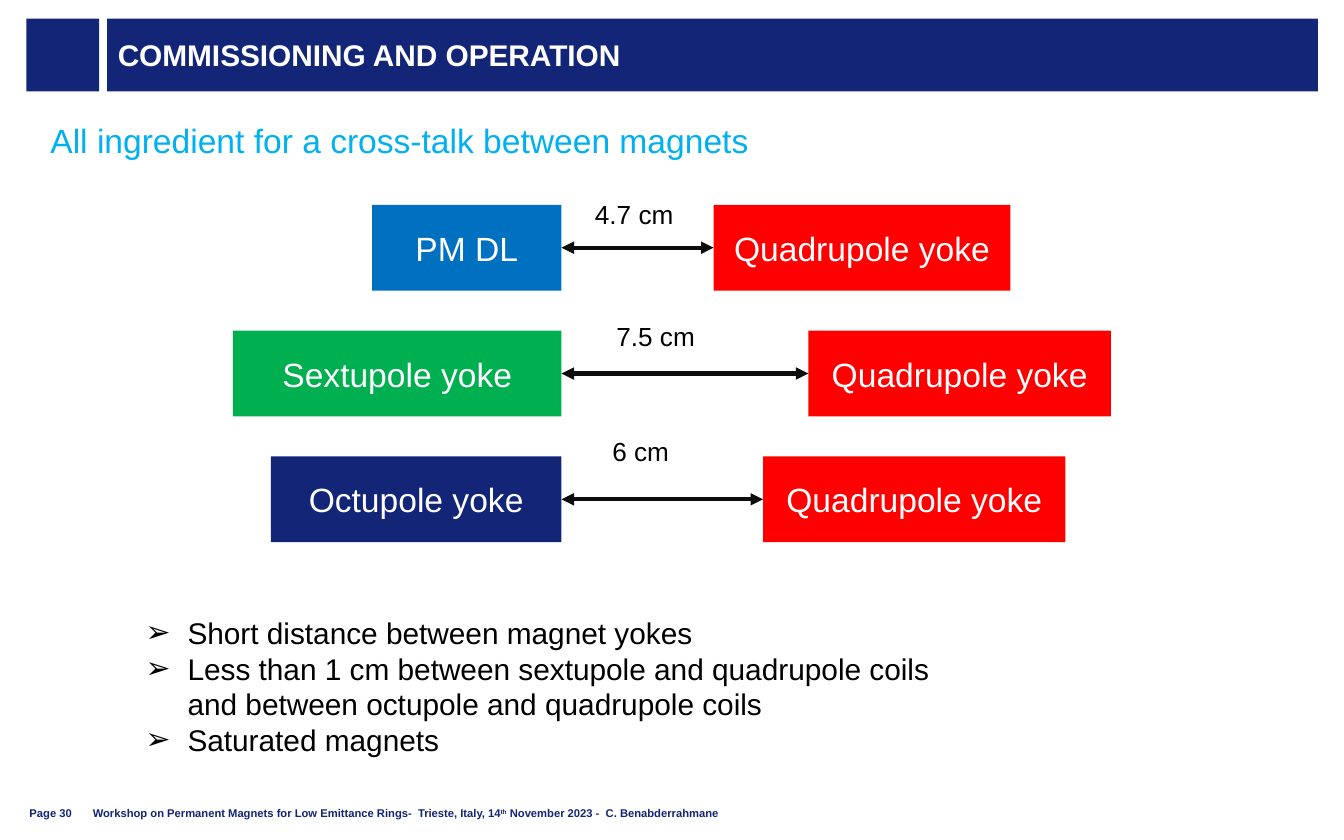
"""Builds the slide on cross-talk between neighbouring magnets."""
import pptx
import pptx.util
import pptx.dml.color
import pptx.enum.shapes
import pptx.enum.text
import pptx.oxml.ns
from lxml import etree

Pt = pptx.util.Pt
RGBColor = pptx.dml.color.RGBColor
ALIGN = pptx.enum.text.PP_ALIGN
ANCHOR = pptx.enum.text.MSO_ANCHOR
RECTANGLE = pptx.enum.shapes.MSO_SHAPE.RECTANGLE
qn = pptx.oxml.ns.qn

NAVY = RGBColor(0x13, 0x25, 0x77)
BLUE = RGBColor(0x00, 0x70, 0xC0)
GREEN = RGBColor(0x00, 0xB0, 0x50)
RED = RGBColor(0xFF, 0x00, 0x00)
SKY = RGBColor(0x00, 0xB0, 0xF0)
INK = RGBColor(0x0D, 0x0D, 0x0D)
BLACK = RGBColor(0x00, 0x00, 0x00)
WHITE = RGBColor(0xFF, 0xFF, 0xFF)

FOOTER_FONT = {"size": 6, "color": NAVY, "bold": True}
NO_MARGINS = {"margin_left": 0, "margin_right": 0, "margin_top": 0, "margin_bottom": 0}
FOOTER_FRAME = {**NO_MARGINS, "vertical_anchor": ANCHOR.BOTTOM}

MAGNET_PAIRS = [
    {"magnet": "PM DL", "color": BLUE, "width": 101.5, "gap": 81.5,
     "yoke_width": 159, "distance": "4.7 cm", "label": (10.8, -6.7)},
    {"magnet": "Sextupole yoke", "color": GREEN, "width": 176, "gap": 132.3,
     "yoke_width": 162, "distance": "7.5 cm", "label": (22.3, -9.2)},
    {"magnet": "Octupole yoke", "color": NAVY, "width": 155.7, "gap": 108,
     "yoke_width": 162, "distance": "6 cm", "label": (20.1, -14.6)},
]
FINDINGS = [
    "Short distance between magnet yokes",
    "Less than 1 cm between sextupole and quadrupole coils "
    "and between octupole and quadrupole coils",
    "Saturated magnets",
]


def apply_format(target, values):
    """Set each named attribute of the target."""
    for name, value in values.items():
        setattr(target, name, value)


def add_run(paragraph, text, size, color, bold=False):
    """Append a formatted run to the paragraph."""
    run = paragraph.add_run()
    run.text = text
    apply_format(run.font, {"name": "Arial", "size": Pt(size), "bold": bold})
    run.font.color.rgb = color
    return run


def add_text(slide, left, top, width, height, text, font, frame_format=None):
    """Add a text box with one paragraph and return its frame."""
    frame = slide.shapes.add_textbox(Pt(left), Pt(top), Pt(width), Pt(height)).text_frame
    apply_format(frame, {"word_wrap": False, **(frame_format or {})})
    add_run(frame.paragraphs[0], text, **font)
    return frame


def add_block(slide, left, top, width, height, color, text=None):
    """Add a plain filled rectangle, with a centred caption if given."""
    block = slide.shapes.add_shape(RECTANGLE, Pt(left), Pt(top), Pt(width), Pt(height))
    block.shadow.inherit = False
    block.fill.solid()
    block.fill.fore_color.rgb = color
    block.line.fill.background()
    if text:
        apply_format(block.text_frame, {"vertical_anchor": ANCHOR.MIDDLE, "word_wrap": True})
        paragraph = block.text_frame.paragraphs[0]
        paragraph.alignment = ALIGN.CENTER
        add_run(paragraph, text, 18, WHITE)
    return block


def add_distance_arrow(slide, magnet, yoke):
    """Join two blocks with a double-headed arrow."""
    arrow = slide.shapes.add_connector(pptx.enum.shapes.MSO_CONNECTOR.STRAIGHT, 0, 0, 0, 0)
    arrow.begin_connect(magnet, 3)
    arrow.end_connect(yoke, 1)
    arrow.line.color.rgb = INK
    arrow.line.width = Pt(2.25)
    line = arrow.line._get_or_add_ln()
    for end in ("a:headEnd", "a:tailEnd"):
        etree.SubElement(line, qn(end), type="triangle")
    etree.SubElement(arrow._element.spPr, qn("a:effectLst"))


def build_header(slide, left, top, width, height):
    """Place the square and the title band."""
    add_block(slide, left, top, height, height, NAVY)
    offset = height + 4.2
    title = slide.shapes.title
    apply_format(title, {"left": Pt(left + offset), "top": Pt(top),
                         "width": Pt(width - offset), "height": Pt(height)})
    title.fill.solid()
    title.fill.fore_color.rgb = NAVY
    apply_format(title.text_frame, {
        **NO_MARGINS, "margin_left": Pt(5.7), "margin_right": Pt(5.7),
        "vertical_anchor": ANCHOR.MIDDLE, "word_wrap": True,
        "auto_size": pptx.enum.text.MSO_AUTO_SIZE.NONE})
    paragraph = title.text_frame.paragraphs[0]
    paragraph.alignment = ALIGN.LEFT
    add_run(paragraph, "COMMISSIONING AND OPERATION", 16, WHITE, True)


def build_magnet_pair(slide, axis, top, height, pair):
    """Place a magnet ending at the axis, its distance and the facing yoke."""
    magnet = add_block(slide, axis - pair["width"], top, pair["width"], height,
                       pair["color"], pair["magnet"])
    yoke = add_block(slide, axis + pair["gap"], top, pair["yoke_width"], height,
                     RED, "Quadrupole yoke")
    add_distance_arrow(slide, magnet, yoke)
    dx, dy = pair["label"]
    add_text(slide, axis + dx, top + dy, 57, 24.5, pair["distance"],
             {"size": 14, "color": BLACK})


def build_findings(slide, left, top, width, height):
    """Place the bulleted findings."""
    frame = slide.shapes.add_textbox(Pt(left), Pt(top), Pt(width), Pt(height)).text_frame
    frame.word_wrap = True
    for index, finding in enumerate(FINDINGS):
        paragraph = frame.add_paragraph() if index else frame.paragraphs[0]
        properties = paragraph._p.get_or_add_pPr()
        properties.set("marL", str(Pt(22.5)))
        properties.set("indent", str(-Pt(22.5)))
        etree.SubElement(properties, qn("a:buFont"), typeface="Arial")
        etree.SubElement(properties, qn("a:buChar"), char="➢")
        add_run(paragraph, finding, 16, BLACK)


def build_footer(slide, left, top, width, height):
    """Place the page number and the workshop line."""
    add_text(slide, left, top, 32.4, height, "Page 30", FOOTER_FONT, FOOTER_FRAME)
    offset = 33.9
    workshop = add_text(
        slide, left + offset, top, width - offset, height,
        "Workshop on Permanent Magnets for Low Emittance Rings-  Trieste, Italy, 14",
        FOOTER_FONT, FOOTER_FRAME).paragraphs[0]
    ordinal = add_run(workshop, "th", **FOOTER_FONT)
    ordinal.font._element.set("baseline", "30000")
    add_run(workshop, " November 2023 -  C. Benabderrahmane", **FOOTER_FONT)


def main():
    """Build and save the slide."""
    presentation = pptx.Presentation()
    apply_format(presentation, {"slide_width": Pt(720), "slide_height": Pt(450)})
    slide = presentation.slides.add_slide(presentation.slide_layouts[5])
    build_header(slide, 14.2, 10, 691.8, 39)
    add_text(slide, 19.9, 60.8, 392.4, 29, "All ingredient for a cross-talk between magnets",
             {"size": 18, "color": SKY})
    for row, pair in enumerate(MAGNET_PAIRS):
        build_magnet_pair(slide, 300.8, 109.7 + row * 67.4, 46, pair)
    build_findings(slide, 70.9, 325.6, 439.2, 104.4)
    build_footer(slide, 15.8, 425.7, 515.6, 13.7)
    presentation.save("out.pptx")


if __name__ == "__main__":
    main()
